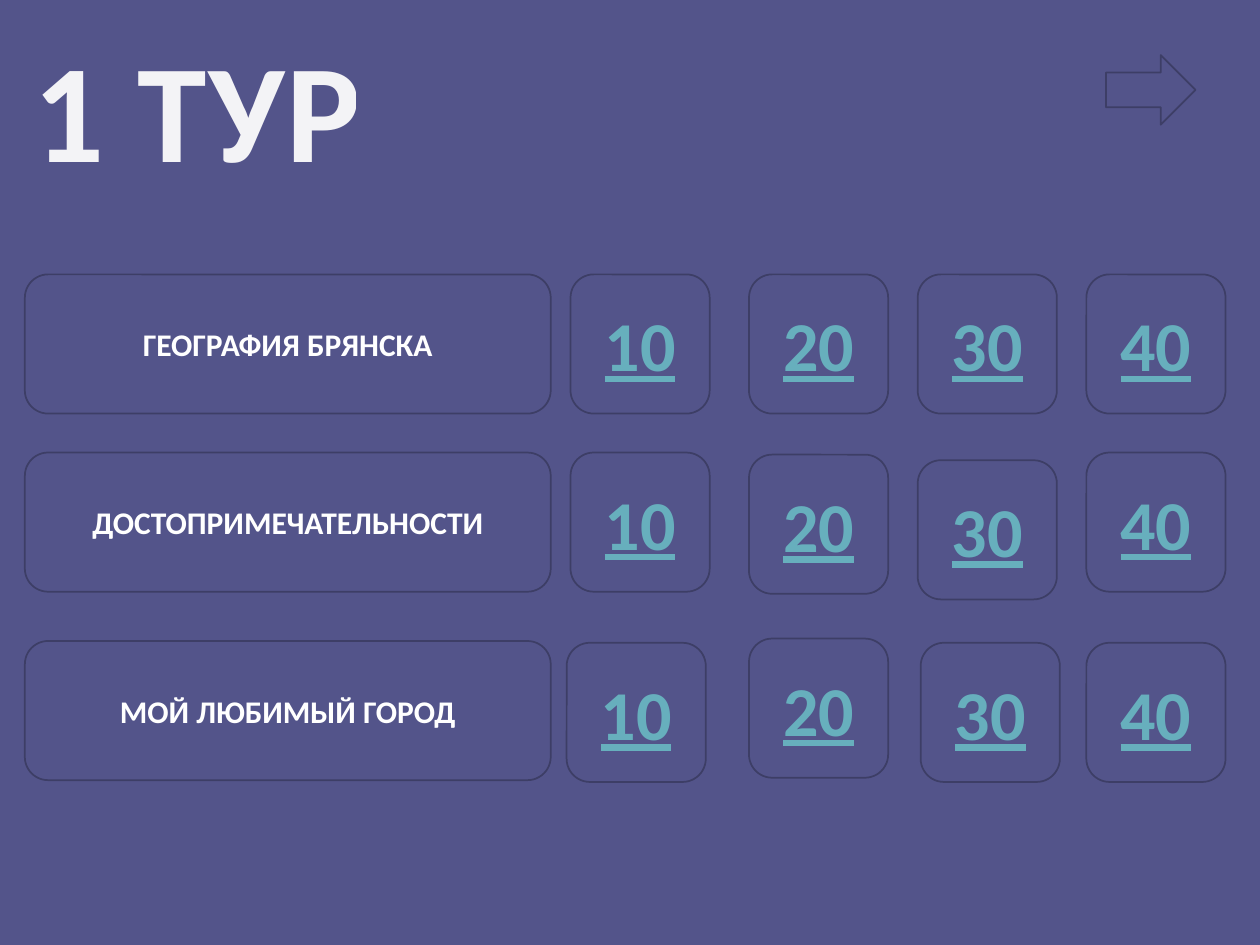
from dataclasses import dataclass

from lxml import etree
from pptx import Presentation
from pptx.dml.color import RGBColor
from pptx.enum.shapes import MSO_SHAPE
from pptx.enum.text import MSO_ANCHOR, MSO_AUTO_SIZE, PP_ALIGN
from pptx.oxml.ns import qn
from pptx.util import Pt

ROUND = MSO_SHAPE.ROUNDED_RECTANGLE
ARROW = MSO_SHAPE.RIGHT_ARROW
MIDDLE = MSO_ANCHOR.MIDDLE
CENTER = PP_ALIGN.CENTER
GROW = MSO_AUTO_SIZE.SHAPE_TO_FIT_TEXT


@dataclass(frozen=True)
class Theme:
    face: str = "Calibri"
    back: str = "53548A"
    edge: str = "3D3E66"
    light: str = "FCFCFC"
    white: str = "FFFFFF"
    link: str = "67AFBD"
    title: int = 80
    topic: int = 18
    score: int = 40


class Board:
    def __init__(self, slide, theme):
        self.slide, self.theme = slide, theme
        fill = slide.background.fill
        fill.solid()
        fill.fore_color.rgb = RGBColor.from_string(theme.back)

    def label(self, frame, text, size, color, **extra):
        par = frame.paragraphs[0]
        par.alignment = CENTER
        run = par.add_run()
        run.text = text
        style = {"name": self.theme.face, "size": Pt(size), "bold": True, **extra}
        for key, value in style.items():
            setattr(run.font, key, value)
        run.font.color.rgb = RGBColor.from_string(color)
        return run

    def title(self, text, box):
        frame = self.slide.shapes.add_textbox(*map(Pt, box)).text_frame
        frame.word_wrap = False
        frame.auto_size = GROW
        run = self.label(frame, text, self.theme.title, self.theme.light)
        # Letter spacing and slight transparency
        props = run._r.get_or_add_rPr()
        props.set("spc", "50")
        tone = props.find(".//" + qn("a:srgbClr"))
        etree.SubElement(tone, qn("a:alpha")).set("val", "95000")

    def shape(self, kind, box):
        item = self.slide.shapes.add_shape(kind, *map(Pt, box))
        item.shadow.inherit = False
        item.fill.solid()
        item.fill.fore_color.rgb = RGBColor.from_string(self.theme.back)
        item.line.color.rgb = RGBColor.from_string(self.theme.edge)
        item.line.width = Pt(1)
        return item

    def card(self, text, box, size, color, **extra):
        frame = self.shape(ROUND, box).text_frame
        frame.word_wrap = True
        frame.vertical_anchor = MIDDLE
        self.label(frame, text, size, color, **extra)


# Grid of topics and scores, in points
SIDE = 79.5
LEFT, WIDE = 14.2, 300.5
ROWS = {
    "ГЕОГРАФИЯ БРЯНСКА": 156.8,
    "ДОСТОПРИМЕЧАТЕЛЬНОСТИ": 258.6,
    "МОЙ ЛЮБИМЫЙ ГОРОД": 366.3,
}
COLS = {10: 326, 20: 428, 30: 524.4, 40: 620.8}
# Cards set slightly off the grid: (row, score) -> (dx, dy)
SHIFT = {
    (1, 20): (0, 1.2),
    (1, 30): (0, 4.4),
    (2, 10): (-2.2, 1),
    (2, 20): (0, -1.4),
    (2, 30): (1.7, 1),
    (2, 40): (0, 1),
}


def main():
    deck = Presentation()
    deck.slide_width, deck.slide_height = Pt(720), Pt(540)
    theme = Theme()
    board = Board(deck.slides.add_slide(deck.slide_layouts[6]), theme)

    # Heading
    board.title("1 ТУР", (1.6, 9.2, 222.5, 104.2))

    # Topics with their scores
    for row, (topic, top) in enumerate(ROWS.items()):
        board.card(topic, (LEFT, top, WIDE, SIDE), theme.topic, theme.white)
        for score, left in COLS.items():
            dx, dy = SHIFT.get((row, score), (0, 0))
            board.card(str(score), (left + dx, top + dy, SIDE, SIDE),
                       theme.score, theme.link, underline=True)

    # Next arrow
    board.shape(ARROW, (632, 31.5, 51.2, 39.8))

    deck.save("out.pptx")


if __name__ == "__main__":
    main()
